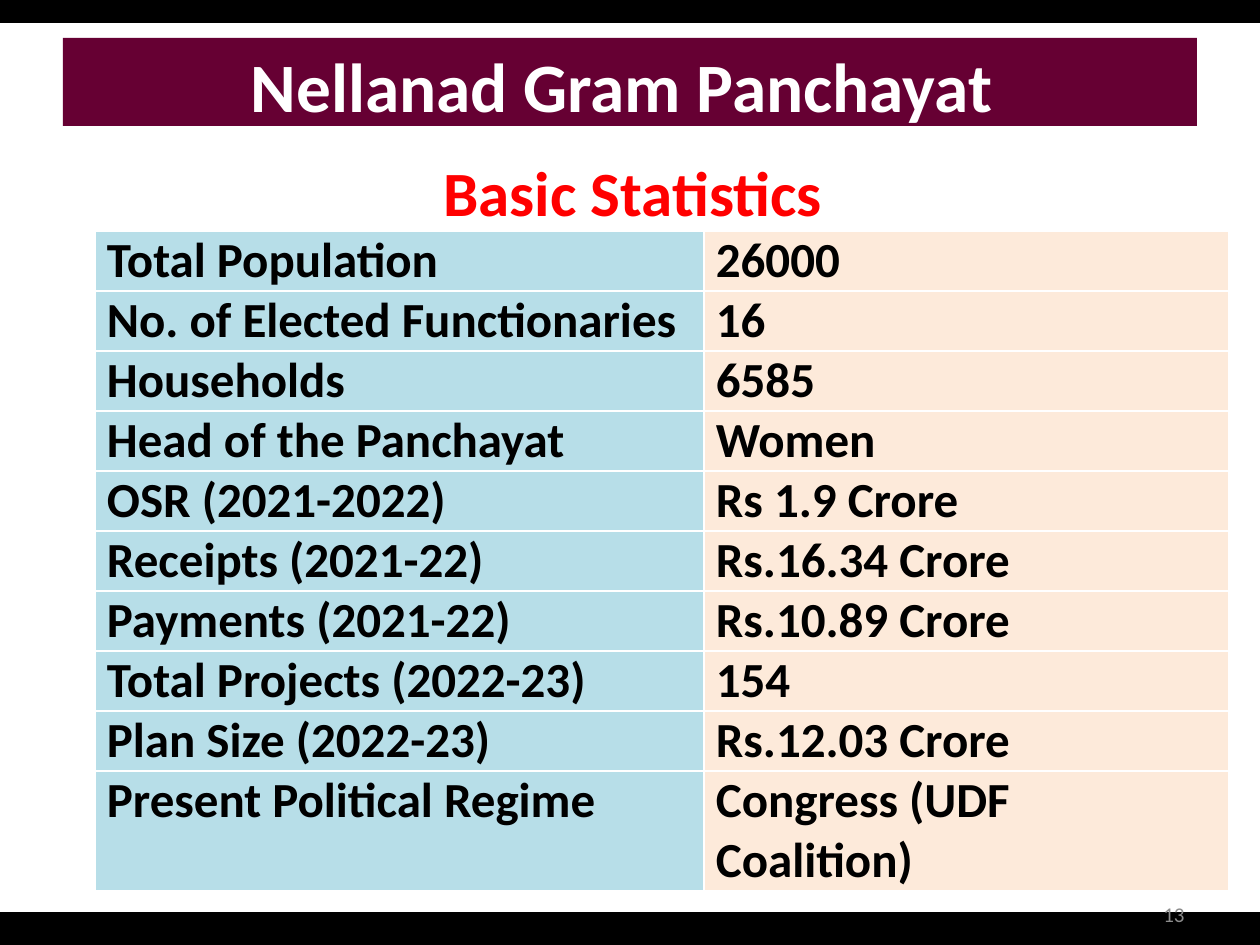
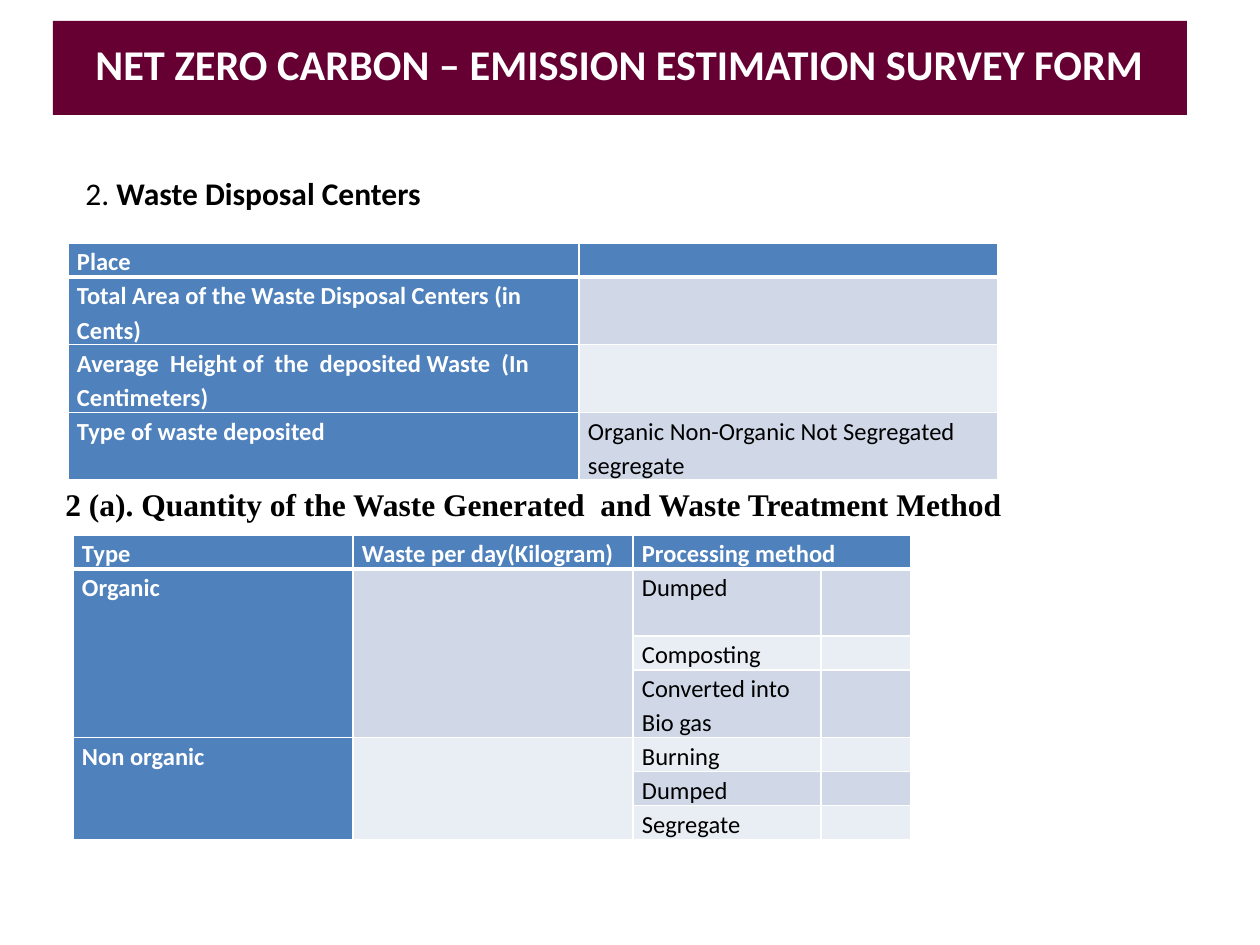
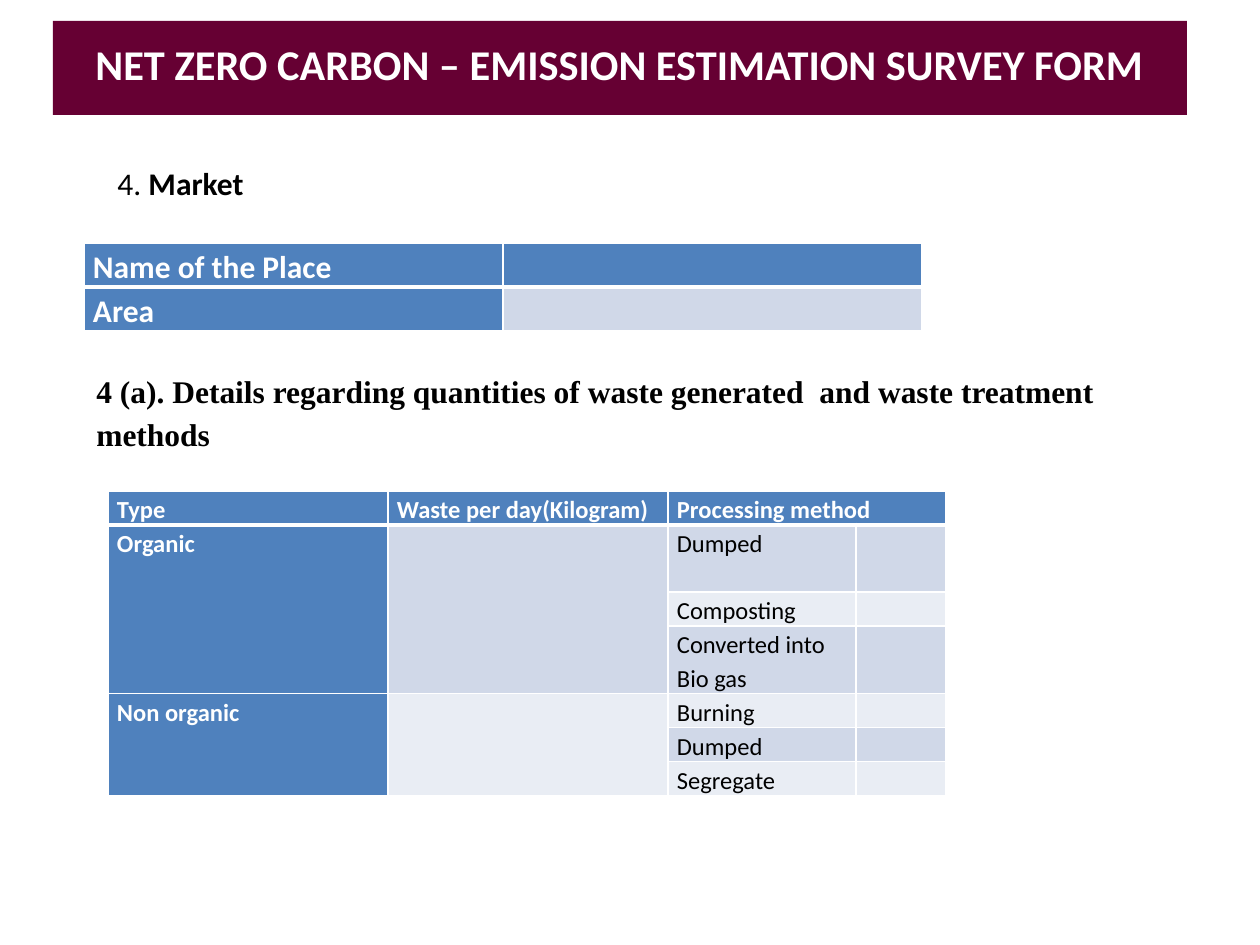
from dataclasses import dataclass

from lxml.etree import SubElement
from pptx import Presentation
from pptx.dml.color import RGBColor
from pptx.enum.shapes import MSO_SHAPE as Shape
from pptx.enum.text import MSO_ANCHOR as Anchor, PP_ALIGN as Align
from pptx.oxml.ns import qn
from pptx.util import Emu, Pt

EMU_PER_PX = 914400 / 126


def px(length):
    return Emu(round(length * EMU_PER_PX))


@dataclass(frozen=True)
class Theme:
    sans: str = "Calibri"
    serif: str = "Times New Roman"
    white: str = "FFFFFF"
    black: str = "000000"
    band: str = "660033"
    accent: str = "FF0000"
    number: str = "8C8C8C"
    label_fill: str = "B7DEE8"
    value_fill: str = "FDEADA"
    header_fill: str = "4F81BD"
    stripe_dark: str = "D0D8E8"
    stripe_light: str = "E9EDF4"
    title_size: float = 39.6
    form_title_size: float = 24.2
    subtitle_size: float = 36
    statistics_size: float = 28
    body_size: float = 18
    form_size: float = 14
    number_size: float = 12
    form_spacing: float = 1.15


class Deck:
    """Holds the theme and the slide being filled."""

    def __init__(self, theme):
        self.theme = theme
        self.presentation = Presentation()
        self.presentation.slide_width = px(1260)
        self.presentation.slide_height = px(945)
        self.slide = None

    def new_slide(self):
        blank = self.presentation.slide_layouts[6]
        self.slide = self.presentation.slides.add_slide(blank)

    def style(self, paragraph, size, color, bold=False, font=None):
        paragraph.font.name = font or self.theme.sans
        paragraph.font.size = Pt(size)
        paragraph.font.bold = bold
        paragraph.font.color.rgb = RGBColor.from_string(color)

    def rectangle(self, left, top, width, height, fill, line_width=0):
        shape = self.slide.shapes.add_shape(
            Shape.RECTANGLE, px(left), px(top), px(width), px(height))
        shape.shadow.inherit = False
        shape.fill.solid()
        shape.fill.fore_color.rgb = RGBColor.from_string(fill)
        if line_width:
            shape.line.color.rgb = RGBColor.from_string(fill)
            shape.line.width = Pt(line_width)
        else:
            shape.line.fill.background()
        return shape

    def title_band(self, left, top, height, text, size, spacing=1.0):
        shape = self.rectangle(left, top, 1134, height, self.theme.band)
        frame = shape.text_frame
        frame.vertical_anchor = Anchor.MIDDLE
        paragraph = frame.paragraphs[0]
        paragraph.text = text
        paragraph.alignment = Align.CENTER
        paragraph.line_spacing = spacing
        self.style(paragraph, size, self.theme.white, bold=True)
        return frame

    def text(self, left, top, width, height, text, size, color, bold=False,
             font=None, wrap=True):
        box = self.slide.shapes.add_textbox(px(left), px(top), px(width), px(height))
        box.text_frame.word_wrap = wrap
        paragraph = box.text_frame.paragraphs[0]
        paragraph.text = text
        self.style(paragraph, size, color, bold, font)
        return paragraph

    def section(self, left, top, width, number, name):
        """Numbered heading with a bold name."""
        theme = self.theme
        paragraph = self.text(left, top, width, 50, number, theme.body_size, theme.black)
        run = paragraph.add_run()
        run.text = name
        run.font.bold = True

    def subsection(self, left, top, width, height, text, wrap):
        theme = self.theme
        paragraph = self.text(left, top, width, height, text, theme.body_size,
                              theme.black, True, theme.serif, wrap)
        paragraph.line_spacing = theme.form_spacing
        paragraph.space_after = Pt(10)

    def borders(self, cell, bottom_width):
        properties = cell._tc.get_or_add_tcPr()
        widths = {"lnL": 1, "lnR": 1, "lnT": 1, "lnB": bottom_width}
        for index, (tag, width) in enumerate(widths.items()):
            line = SubElement(properties, qn(f"a:{tag}"), w=str(Pt(width)))
            fill = SubElement(line, qn("a:solidFill"))
            SubElement(fill, qn("a:srgbClr"), val=self.theme.white)
            properties.insert(index, line)

    def table(self, left, top, widths, heights, rows, cell_look, size,
              inset, spacing=1.0, header_rule=1):
        """cell_look(row, column) gives the fill, text colour and boldness."""
        frame = self.slide.shapes.add_table(
            len(heights), len(widths), px(left), px(top),
            px(sum(widths)), px(sum(heights)))
        table = frame.table
        table.first_row = table.horz_banding = False
        for column, width in zip(table.columns, widths):
            column.width = px(width)
        for row, height in zip(table.rows, heights):
            row.height = px(height)
        for row_index, row in enumerate(rows):
            for column_index, text in enumerate(row):
                cell = table.cell(row_index, column_index)
                fill, color, bold = cell_look(row_index, column_index)
                cell.margin_left, cell.margin_right = px(inset), px(inset)
                cell.margin_top = cell.margin_bottom = 0
                cell.fill.solid()
                cell.fill.fore_color.rgb = RGBColor.from_string(fill)
                self.borders(cell, header_rule if row_index == 0 else 1)
                paragraph = cell.text_frame.paragraphs[0]
                paragraph.line_spacing = spacing
                self.style(paragraph, size, color, bold)
                if text:
                    paragraph.text = text
                else:
                    SubElement(paragraph._p, qn("a:endParaRPr"), sz=str(size * 100))
        return table

    def statistics_table(self, left, top, widths, rows):
        theme = self.theme
        fills = (theme.label_fill, theme.value_fill)
        self.table(left, top, widths, [60] * len(rows), rows,
                   lambda row, column: (fills[column], theme.black, True),
                   theme.statistics_size, 12)

    def form_table(self, left, top, widths, heights, rows, size):
        """Table with a header row, a header column and striped rows."""
        theme = self.theme

        def look(row, column):
            if row == 0 or column == 0:
                return theme.header_fill, theme.white, True
            stripe = theme.stripe_dark if row % 2 else theme.stripe_light
            return stripe, theme.black, False

        return self.table(left, top, widths, heights, rows, look, size,
                          9, theme.form_spacing, header_rule=3)

    def treatment_table(self, left, top):
        table = self.form_table(left, top, [280, 280, 188, 90],
                                [34, 67, 34, 67, 34, 34, 34],
                                TREATMENT, self.theme.form_size)
        table.cell(0, 2).merge(table.cell(0, 3))
        for first_row in (1, 4):
            for column in (0, 1):
                table.cell(first_row, column).merge(table.cell(first_row + 2, column))

    def form_slide(self):
        self.new_slide()
        self.title_band(53, 21, 94, FORM_TITLE, self.theme.form_title_size, 0.8)


FORM_TITLE = "NET ZERO CARBON – EMISSION ESTIMATION SURVEY FORM"

STATISTICS = [
    ("Total Population", "26000"),
    ("No. of Elected Functionaries", "16"),
    ("Households", "6585"),
    ("Head of the Panchayat", "Women"),
    ("OSR (2021-2022)", "Rs 1.9 Crore"),
    ("Receipts (2021-22)", "Rs.16.34 Crore"),
    ("Payments (2021-22)", "Rs.10.89 Crore"),
    ("Total Projects (2022-23)", "154"),
    ("Plan Size (2022-23)", "Rs.12.03 Crore"),
    ("Present Political Regime", "Congress (UDF Coalition)"),
]

DISPOSAL = [
    ("Place", ""),
    ("Total Area of the Waste Disposal Centers (in Cents)", ""),
    ("Average  Height of  the  deposited Waste  (In Centimeters)", ""),
    ("Type of waste deposited", "Organic Non-Organic Not Segregated segregate"),
]

TREATMENT = [
    ("Type", "Waste per day(Kilogram)", "Processing method", ""),
    ("Organic", "", "Dumped", ""),
    ("", "", "Composting", ""),
    ("", "", "Converted into Bio gas", ""),
    ("Non organic", "", "Burning", ""),
    ("", "", "Dumped", ""),
    ("", "", "Segregate", ""),
]

MARKET = [("Name of the Place", ""), ("Area", "")]


def add_statistics_slide(deck):
    theme = deck.theme
    deck.new_slide()
    title = deck.title_band(63, 38, 88, "Nellanad Gram Panchayat", theme.title_size)
    title.margin_right = px(29)
    title.margin_top = px(12)
    deck.statistics_table(95, 231, [609, 525], STATISTICS)
    deck.text(431, 147, 410, 89, "Basic Statistics", theme.subtitle_size,
              theme.accent, bold=True, wrap=False)
    for top, height in ((0, 21), (914, 31)):
        deck.rectangle(0, top, 1260, height, theme.black, line_width=2)
    number = deck.text(903, 895, 294, 50, "13", theme.number_size, theme.number)
    number.alignment = Align.RIGHT


def add_disposal_slide(deck):
    deck.form_slide()
    deck.section(73, 168, 620, "2. ", "Waste Disposal Centers")
    deck.form_table(68, 243, [511, 419], [34, 67, 68, 67], DISPOSAL,
                    deck.theme.form_size)
    deck.treatment_table(73, 535)
    deck.subsection(53, 473, 971, 54, "2 (a). Quantity of the Waste Generated  "
                    "and Waste Treatment Method", wrap=False)


def add_market_slide(deck):
    deck.form_slide()
    deck.form_table(84, 243, [419, 419], [44, 44], MARKET, deck.theme.body_size)
    deck.section(105, 158, 588, "4. ", "Market")
    deck.subsection(84, 360, 1061, 98, "4 (a). Details regarding quantities of waste "
                    "generated  and waste treatment methods", wrap=True)
    deck.treatment_table(108, 491)


def main():
    deck = Deck(Theme())
    add_statistics_slide(deck)
    add_disposal_slide(deck)
    add_market_slide(deck)
    deck.presentation.save("out.pptx")


if __name__ == "__main__":
    main()
